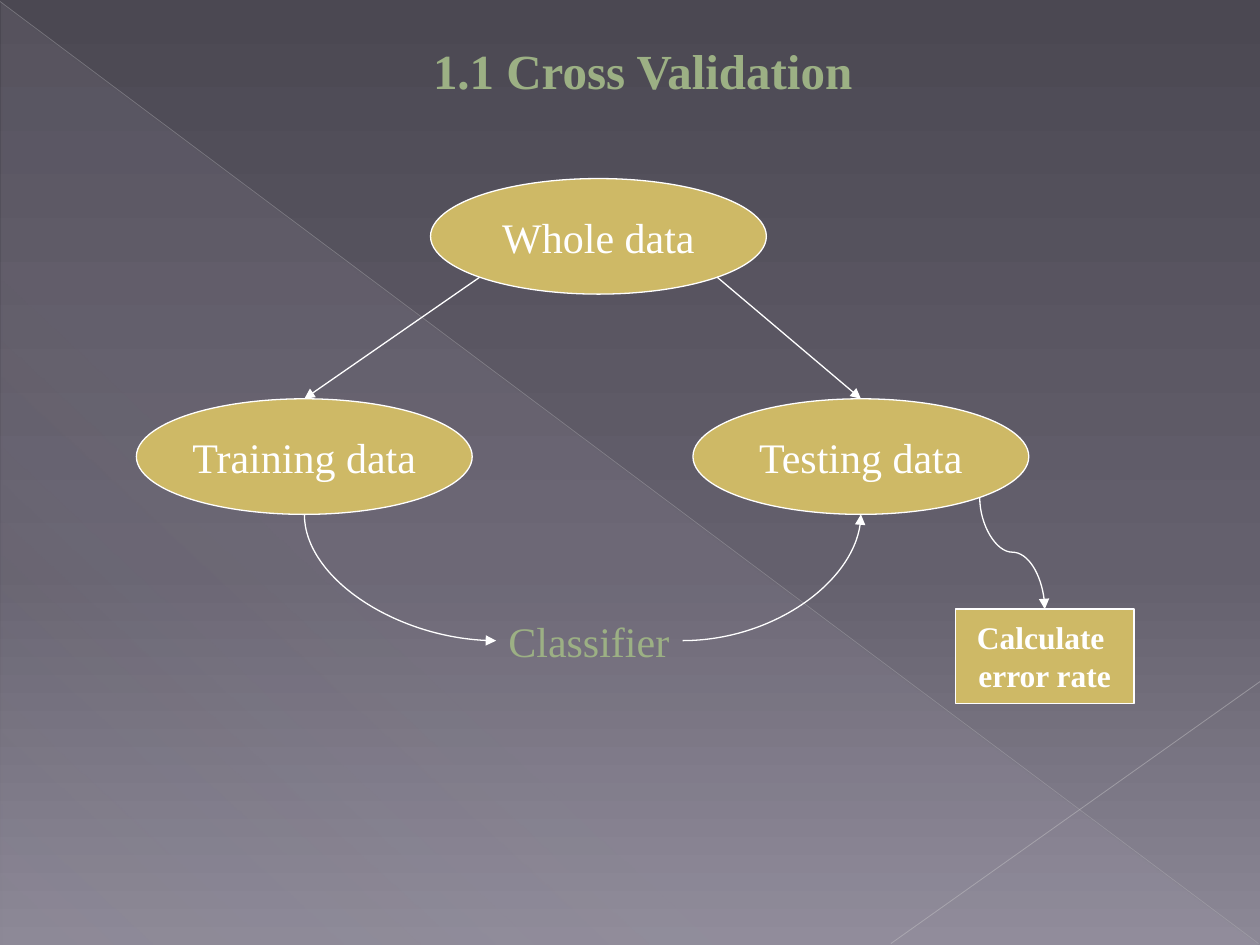
"""Build a slide that shows the cross validation workflow."""
from dataclasses import dataclass
from math import sqrt

from lxml.etree import SubElement
from pptx import Presentation
from pptx.dml.color import RGBColor
from pptx.enum.shapes import MSO_CONNECTOR, MSO_SHAPE
from pptx.enum.text import MSO_ANCHOR, MSO_AUTO_SIZE, PP_ALIGN
from pptx.oxml.ns import qn
from pptx.util import Cm, Pt


@dataclass(frozen=True)
class Theme:
    """Colours, font and type sizes of the slide."""
    font: str = "Times New Roman"
    accent: str = "9CB084"
    node: str = "CEB966"
    light: str = "FFFFFF"
    title_size: int = 28
    label_size: int = 24
    note_size: int = 18
    line_width: float = 0.75
    background: tuple = ((0, "4B4852", 100), (60, "64606D", 100), (100, "8C8896", 100))
    sheen: tuple = ((0, "C9C2D1", 10), (70, "C9C2D1", 8), (100, "C9C2D1", 1))


THEME = Theme()
DIAGONAL = sqrt(0.5)


def set_gradient(parent, stops, angle):
    """Replace the solid fill inside parent with a linear gradient."""
    solid = parent.find(qn("a:solidFill"))
    gradient = SubElement(parent, qn("a:gradFill"), rotWithShape="1")
    parent.replace(solid, gradient)
    stop_list = SubElement(gradient, qn("a:gsLst"))
    for position, colour, opacity in stops:
        stop = SubElement(stop_list, qn("a:gs"), pos=str(position * 1000))
        value = SubElement(stop, qn("a:srgbClr"), val=colour)
        SubElement(value, qn("a:alpha"), val=str(opacity * 1000))
    SubElement(gradient, qn("a:lin"), ang=str(angle * 60000), scaled="0")


def write_text(shape, text, *, size, colour, bold=False, align=PP_ALIGN.CENTER,
               anchor=MSO_ANCHOR.MIDDLE):
    """Write each line of text as a formatted paragraph in shape."""
    frame = shape.text_frame
    frame.word_wrap = False
    frame.vertical_anchor = anchor
    for index, line in enumerate(text.split("\n")):
        para = frame.add_paragraph() if index else frame.paragraphs[0]
        para.alignment = align
        span = para.add_run()
        span.text = line
        span.font.name = THEME.font
        span.font.size = Pt(size)
        span.font.bold = bold
        span.font.color.rgb = RGBColor.from_string(colour)


def add_label(page, text, left, top, width, height, **style):
    """Add a text box that fits its text."""
    box = page.shapes.add_textbox(Cm(left), Cm(top), Cm(width), Cm(height))
    write_text(box, text, colour=THEME.accent, anchor=MSO_ANCHOR.TOP, **style)
    box.text_frame.auto_size = MSO_AUTO_SIZE.SHAPE_TO_FIT_TEXT
    return box


def add_node(page, text, left, top, width=6.77, height=2.33,
             kind=MSO_SHAPE.OVAL, size=THEME.label_size, bold=False):
    """Add a filled, outlined shape with centred text."""
    node = page.shapes.add_shape(kind, Cm(left), Cm(top), Cm(width), Cm(height))
    node.shadow.inherit = False
    node.fill.solid()
    node.fill.fore_color.rgb = RGBColor.from_string(THEME.node)
    node.line.color.rgb = RGBColor.from_string(THEME.light)
    node.line.width = Pt(THEME.line_width)
    write_text(node, text, size=size, colour=THEME.light, bold=bold)
    return node


def site(shape, across, down):
    """Return a point of shape, counted from its centre in half sizes."""
    return (round(shape.left + shape.width * (1 + across) / 2),
            round(shape.top + shape.height * (1 + down) / 2))


def add_line(page, start, end, kind=MSO_CONNECTOR.STRAIGHT, colour=THEME.light,
             width=THEME.line_width, opacity=100):
    """Add a connector without shadow."""
    line = page.shapes.add_connector(kind, *start, *end)
    line.line.color.rgb = RGBColor.from_string(colour)
    line.line.width = Pt(width)
    properties = line.element.spPr
    value = next(properties.iter(qn("a:srgbClr")))
    SubElement(value, qn("a:alpha"), val=str(opacity * 1000))
    SubElement(properties, qn("a:effectLst"))
    return line


def add_arrow(page, start, end, **style):
    """Add a connector with a triangle at its end."""
    arrow = add_line(page, start, end, **style)
    outline = arrow.element.spPr.find(qn("a:ln"))
    SubElement(outline, qn("a:tailEnd"), type="triangle")
    return arrow


def add_curve(page, start, end, preset, downward=False, bend=None):
    """Add a curved arrow that leaves sideways, or downward if asked."""
    if downward:
        middle_x, middle_y = (start[0] + end[0]) // 2, (start[1] + end[1]) // 2
        half_x, half_y = (end[0] - start[0]) // 2, (end[1] - start[1]) // 2
        start = (middle_x + half_y, middle_y - half_x)
        end = (middle_x - half_y, middle_y + half_x)
    curve = add_arrow(page, start, end, kind=MSO_CONNECTOR.CURVE)
    properties = curve.element.spPr
    if downward:
        properties.find(qn("a:xfrm")).set("rot", str(270 * 60000))
    geometry = properties.find(qn("a:prstGeom"))
    geometry.set("prst", preset)
    if bend is not None:
        SubElement(geometry.find(qn("a:avLst")), qn("a:gd"),
                   name="adj1", fmla=f"val {round(bend * 100000)}")


def add_backdrop(page):
    """Paint the background gradient, the sheen and the thin diagonals."""
    page.background.fill.solid()
    set_gradient(next(page.element.iter(qn("p:bgPr"))), THEME.background, 90)
    sheen = page.shapes.add_shape(MSO_SHAPE.RIGHT_TRIANGLE,
                                  Cm(0.03), Cm(0.05), Cm(25.35), Cm(19))
    sheen.shadow.inherit = False
    sheen.line.fill.background()
    sheen.fill.solid()
    set_gradient(sheen.element.spPr, THEME.sheen, 133)
    add_line(page, (Cm(0), Cm(0.03)), (Cm(25.37), Cm(19.02)),
             colour="C0BFC2", width=0.39, opacity=35)
    add_line(page, (Cm(25.4), Cm(13.74)), (Cm(17.96), Cm(19.02)),
             colour="C7C6C8", width=0.47, opacity=45)


def main():
    """Build and save the deck."""
    deck = Presentation()
    deck.slide_width, deck.slide_height = Cm(25.4), Cm(19.05)
    page = deck.slides.add_slide(deck.slide_layouts[6])
    add_backdrop(page)

    add_label(page, "1.1 Cross Validation", 8.41, 0.69, 9.09, 1.45,
              size=THEME.title_size, bold=True)
    whole = add_node(page, "Whole data", 8.68, 3.6)
    training = add_node(page, "Training data", 2.75, 8.04)
    testing = add_node(page, "Testing data", 13.97, 8.04)
    classifier = add_label(page, "Classifier", 10, 12.28, 3.76, 1.27,
                           size=THEME.label_size, align=PP_ALIGN.LEFT)
    error = add_node(page, "Calculate \nerror rate", 19.26, 12.28, 3.6, 1.9,
                     kind=MSO_SHAPE.RECTANGLE, size=THEME.note_size, bold=True)

    for target, side in ((training, -DIAGONAL), (testing, DIAGONAL)):
        add_arrow(page, site(whole, side, DIAGONAL), site(target, 0, -1))
    add_curve(page, site(training, 0, 1), site(classifier, -1, 0),
              "curvedConnector2", downward=True)
    add_curve(page, site(testing, DIAGONAL, DIAGONAL), site(error, 0, -1),
              "curvedConnector3", downward=True, bend=0.49)
    add_curve(page, site(classifier, 1, 0), site(testing, 0, 1), "curvedConnector2")
    deck.save("out.pptx")


if __name__ == "__main__":
    main()
